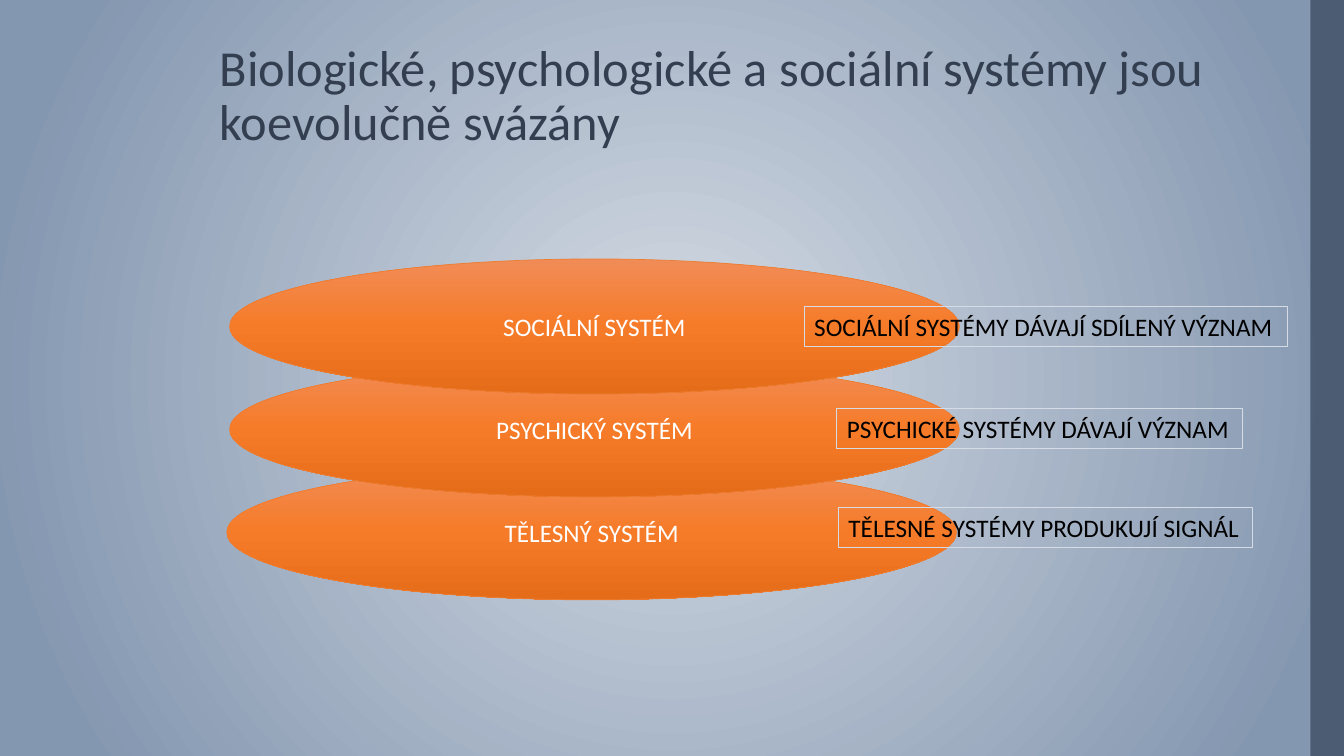
from lxml.etree import SubElement
from pptx import Presentation
from pptx.dml.color import RGBColor
from pptx.enum.shapes import MSO_SHAPE
from pptx.enum.text import MSO_ANCHOR, MSO_AUTO_SIZE, PP_ALIGN
from pptx.oxml.ns import qn
from pptx.util import Pt

PAGE_WIDTH, PAGE_HEIGHT = 960, 540
COLORS = {
    "title": "333F50", "bar": "44546A", "pale": "D6DCE5", "edge": "8497B0",
    "light_orange": "F18C57", "orange": "F67B28", "dark_orange": "E56C19",
    "outline": "ED7D31", "white": "FFFFFF", "black": "000000",
}
TITLE = "Biologické, psychologické a sociální systémy jsou koevolučně svázány"
# System, its left offset, then its label with left, top and width in the diagram
SYSTEMS = [
    ("SOCIÁLNÍ SYSTÉM", 2, "SOCIÁLNÍ SYSTÉMY DÁVAJÍ SDÍLENÝ VÝZNAM", 412.5, 33.8, 345),
    ("PSYCHICKÝ SYSTÉM", 2, "PSYCHICKÉ SYSTÉMY DÁVAJÍ VÝZNAM", 435.8, 106.6, 290),
    ("TĚLESNÝ SYSTÉM", 0, "TĚLESNÉ SYSTÉMY PRODUKUJÍ SIGNÁL", 437, 177.4, 296),
]


def color(name):
    return RGBColor.from_string(COLORS[name])


def write_text(frame, text, size=18, ink="black", align=PP_ALIGN.LEFT,
               anchor=MSO_ANCHOR.MIDDLE, wrap=True, line_spacing=1.0):
    frame.word_wrap = wrap
    frame.vertical_anchor = anchor
    para = frame.paragraphs[0]
    para.alignment = align
    para.line_spacing = line_spacing
    span = para.add_run()
    span.text = text
    span.font.name = "Calibri"
    span.font.size = Pt(size)
    span.font.color.rgb = color(ink)


def set_gradient(fill, element, stops, radial=False):
    """Fill with (percent, color name) stops, from top to bottom or from the centre out."""
    fill.gradient()
    gradient = element.find(".//" + qn("a:gradFill"))
    for child in list(gradient):
        gradient.remove(child)
    stop_list = SubElement(gradient, qn("a:gsLst"))
    for percent, name in stops:
        stop = SubElement(stop_list, qn("a:gs"), pos=str(percent * 1000))
        SubElement(stop, qn("a:srgbClr"), val=COLORS[name])
    if radial:
        circle = SubElement(gradient, qn("a:path"), path="circle")
        SubElement(circle, qn("a:fillToRect"), l="50000", t="50000", r="50000", b="50000")
    else:
        SubElement(gradient, qn("a:lin"), ang="5400000", scaled="0")


def add_box(page, kind, left, top, width, height):
    box = page.shapes.add_shape(kind, Pt(left), Pt(top), Pt(width), Pt(height))
    box.shadow.inherit = False
    return box


def add_backdrop(page, bar_width):
    set_gradient(page.background.fill, page.element, [(0, "pale"), (90, "edge")], radial=True)
    bar = add_box(page, MSO_SHAPE.RECTANGLE, PAGE_WIDTH - bar_width, 0, bar_width, PAGE_HEIGHT)
    bar.fill.solid()
    bar.fill.fore_color.rgb = color("bar")
    bar.line.fill.background()
    SubElement(bar.fill._xPr.find(".//" + qn("a:srgbClr")), qn("a:alpha"), val="87000")


def add_title(page, left, top, width, height):
    box = page.shapes.add_textbox(Pt(left), Pt(top), Pt(width), Pt(height))
    write_text(box.text_frame, TITLE, size=36, ink="title",
               anchor=MSO_ANCHOR.BOTTOM, line_spacing=0.9)


def add_system(page, name, left, top, width, height):
    ellipse = add_box(page, MSO_SHAPE.OVAL, left, top, width, height)
    set_gradient(ellipse.fill, ellipse.element,
                 [(0, "light_orange"), (50, "orange"), (100, "dark_orange")])
    ellipse.line.color.rgb = color("outline")
    ellipse.line.width = Pt(0.5)
    write_text(ellipse.text_frame, name, ink="white", align=PP_ALIGN.CENTER)


def add_label(page, text, left, top, width, height):
    label = add_box(page, MSO_SHAPE.RECTANGLE, left, top, width, height)
    label.fill.background()
    label.line.color.rgb = color("pale")
    label.line.width = Pt(0.75)
    write_text(label.text_frame, text, wrap=False)
    label.text_frame.auto_size = MSO_AUTO_SIZE.SHAPE_TO_FIT_TEXT


def add_diagram(page, left, top):
    """Stack the systems from the lowest up, then lay the labels over them."""
    step = 73.5
    for row, (name, offset, *_) in reversed(list(enumerate(SYSTEMS))):
        add_system(page, name, left + offset, top + row * step, 521.3, 96.5)
    for _, _, text, label_left, label_top, width in reversed(SYSTEMS):
        add_label(page, text, left + label_left, top + label_top, width, 29)


def main():
    deck = Presentation()
    deck.slide_width, deck.slide_height = Pt(PAGE_WIDTH), Pt(PAGE_HEIGHT)
    page = deck.slides.add_slide(deck.slide_layouts[6])
    add_backdrop(page, bar_width=24)
    add_title(page, 149.8, 13.7, 746, 98)
    add_diagram(page, 162, 185)
    deck.save("out.pptx")


if __name__ == "__main__":
    main()
